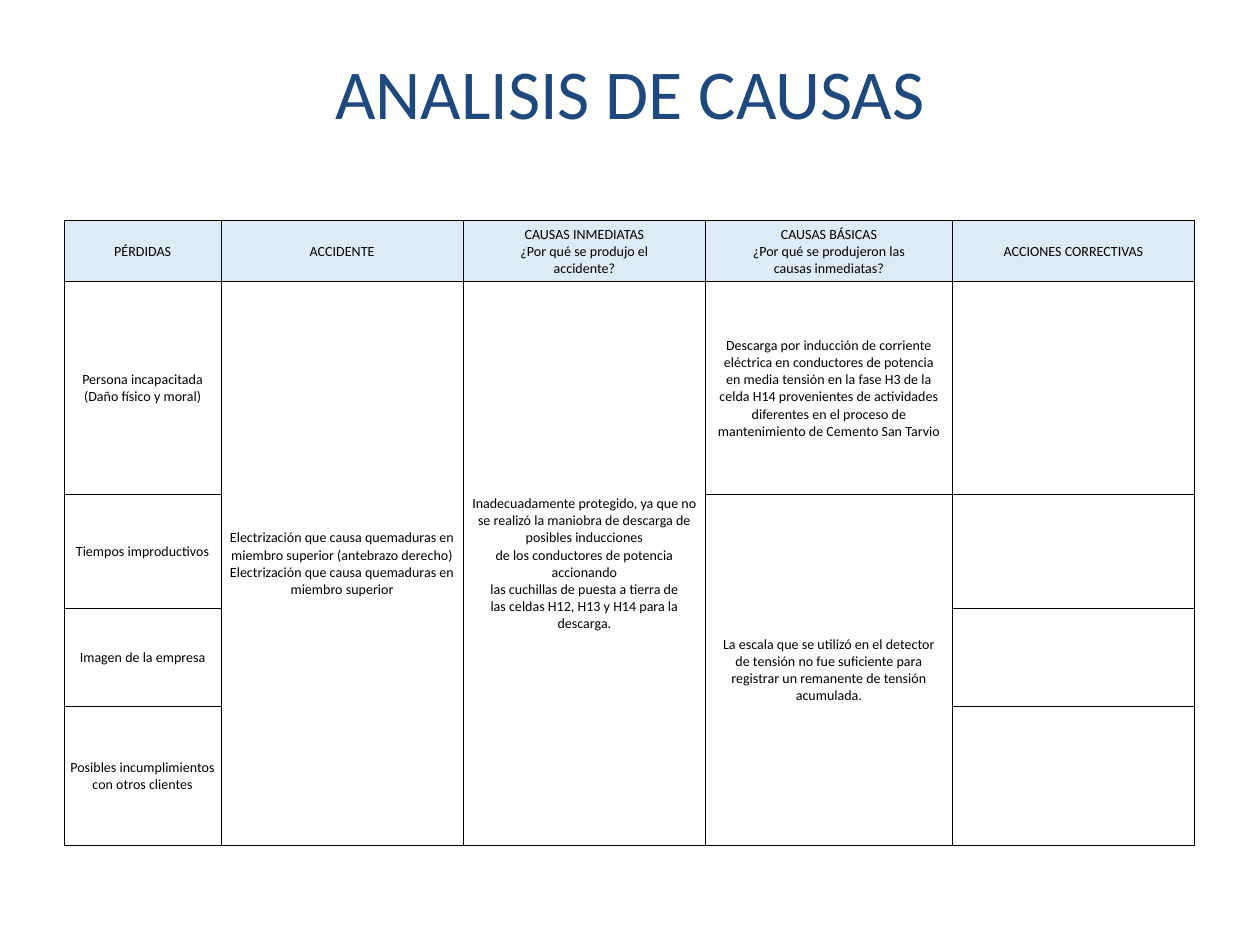
import pptx
import pptx.dml.color
import pptx.enum.text
import pptx.oxml
import pptx.oxml.ns
import pptx.util

Pt = pptx.util.Pt
NAVY = pptx.dml.color.RGBColor(0x1F, 0x49, 0x7D)
PALE_BLUE = pptx.dml.color.RGBColor(0xDD, 0xEB, 0xF7)
BLACK = pptx.dml.color.RGBColor(0, 0, 0)
FONT = "Calibri"

COLUMN_WIDTHS = [89.5, 138.5, 138.5, 141, 138.5]
ROW_HEIGHTS = [34.8, 121.7, 65.3, 55.8, 79.3]
HEADINGS = [
    "PÉRDIDAS",
    "ACCIDENTE",
    "CAUSAS INMEDIATAS\v¿Por qué se produjo el\vaccidente?",
    "CAUSAS BÁSICAS\v¿Por qué se produjeron las\vcausas inmediatas?",
    "ACCIONES CORRECTIVAS",
]
LOSSES = [
    "Persona incapacitada (Daño físico y moral)",
    "Tiempos improductivos",
    "Imagen de la empresa",
    "Posibles incumplimientos\vcon otros clientes",
]
ACCIDENT = (
    "Electrización que causa quemaduras en miembro superior (antebrazo derecho)\v"
    "Electrización que causa quemaduras en miembro superior"
)
IMMEDIATE_CAUSE = (
    "Inadecuadamente protegido, ya que no se realizó la maniobra de descarga de "
    "posibles inducciones\vde los conductores de potencia accionando\v"
    "las cuchillas de puesta a tierra de\v"
    "las celdas H12, H13 y H14 para la descarga."
)
INDUCTION_CAUSE = (
    "Descarga por inducción de corriente\veléctrica en conductores de potencia\v"
    "en media tensión en la fase H3 de la\vcelda H14 provenientes de actividades\v"
    "diferentes en el proceso de\vmantenimiento de Cemento San Tarvio"
)
DETECTOR_CAUSE = (
    "La escala que se utilizó en el detector\vde tensión no fue suficiente para\v"
    "registrar un remanente de tensión\vacumulada."
)
CAUSES = [
    (1, 1, 4, ACCIDENT),
    (1, 2, 4, IMMEDIATE_CAUSE),
    (1, 3, 1, INDUCTION_CAUSE),
    (2, 3, 3, DETECTOR_CAUSE),
]


def format_text(frame, size, color):
    """Centre the text of a frame and give it its font."""
    for paragraph in frame.paragraphs:
        paragraph.alignment = pptx.enum.text.PP_ALIGN.CENTER
        paragraph.font.name = FONT
        paragraph.font.size = Pt(size)
        paragraph.font.color.rgb = color


def add_borders(cell):
    """Draw a thin black line on the four sides of a cell."""
    properties = cell._tc.get_or_add_tcPr()
    for position, side in enumerate(("lnL", "lnR", "lnT", "lnB")):
        line = pptx.oxml.parse_xml(
            f'<a:{side} {pptx.oxml.ns.nsdecls("a")} w="{Pt(0.5)}">'
            f'<a:solidFill><a:srgbClr val="{BLACK}"/></a:solidFill></a:{side}>'
        )
        properties.insert(position, line)


def format_cell(cell, is_heading):
    """Set the fill, margins, text and borders of a cell."""
    if is_heading:
        cell.fill.solid()
        cell.fill.fore_color.rgb = PALE_BLUE
    else:
        cell.fill.background()
    cell.margin_left = cell.margin_right = cell.margin_top = Pt(0.7)
    cell.margin_bottom = 0
    cell.vertical_anchor = pptx.enum.text.MSO_ANCHOR.MIDDLE
    format_text(cell.text_frame, 8, BLACK)
    add_borders(cell)


def place_title(slide, left, top, width, height):
    """Place and format the slide title."""
    title = slide.shapes.title
    title.left, title.top = Pt(left), Pt(top)
    title.width, title.height = Pt(width), Pt(height)
    title.text_frame.text = "ANALISIS DE CAUSAS"
    title.text_frame.vertical_anchor = pptx.enum.text.MSO_ANCHOR.MIDDLE
    format_text(title.text_frame, 40, NAVY)


def add_cause_table(slide, left, top, width, height):
    """Add the table of losses, accident, causes and actions."""
    table = slide.shapes.add_table(
        len(ROW_HEIGHTS), len(COLUMN_WIDTHS), Pt(left), Pt(top), Pt(width), Pt(height)
    ).table
    table.first_row = table.horz_banding = False
    for column, share in zip(table.columns, COLUMN_WIDTHS):
        column.width = Pt(width * share / sum(COLUMN_WIDTHS))
    for row, share in zip(table.rows, ROW_HEIGHTS):
        row.height = Pt(height * share / sum(ROW_HEIGHTS))

    for column, heading in enumerate(HEADINGS):
        table.cell(0, column).text = heading
    for row, loss in enumerate(LOSSES, 1):
        table.cell(row, 0).text = loss
    for row, column, span, cause in CAUSES:
        table.cell(row, column).text = cause
        if span > 1:
            table.cell(row, column).merge(table.cell(row + span - 1, column))

    for row_index, row in enumerate(table.rows):
        for cell in row.cells:
            format_cell(cell, row_index == 0)


def main():
    """Build the presentation and save it."""
    presentation = pptx.Presentation()
    presentation.slide_width, presentation.slide_height = Pt(720), Pt(540)
    slide = presentation.slides.add_slide(presentation.slide_layouts[5])
    place_title(slide, 36, 24, 648, 56)
    add_cause_table(slide, 36.8, 126, 646, 356.9)
    presentation.save("out.pptx")


if __name__ == "__main__":
    main()
